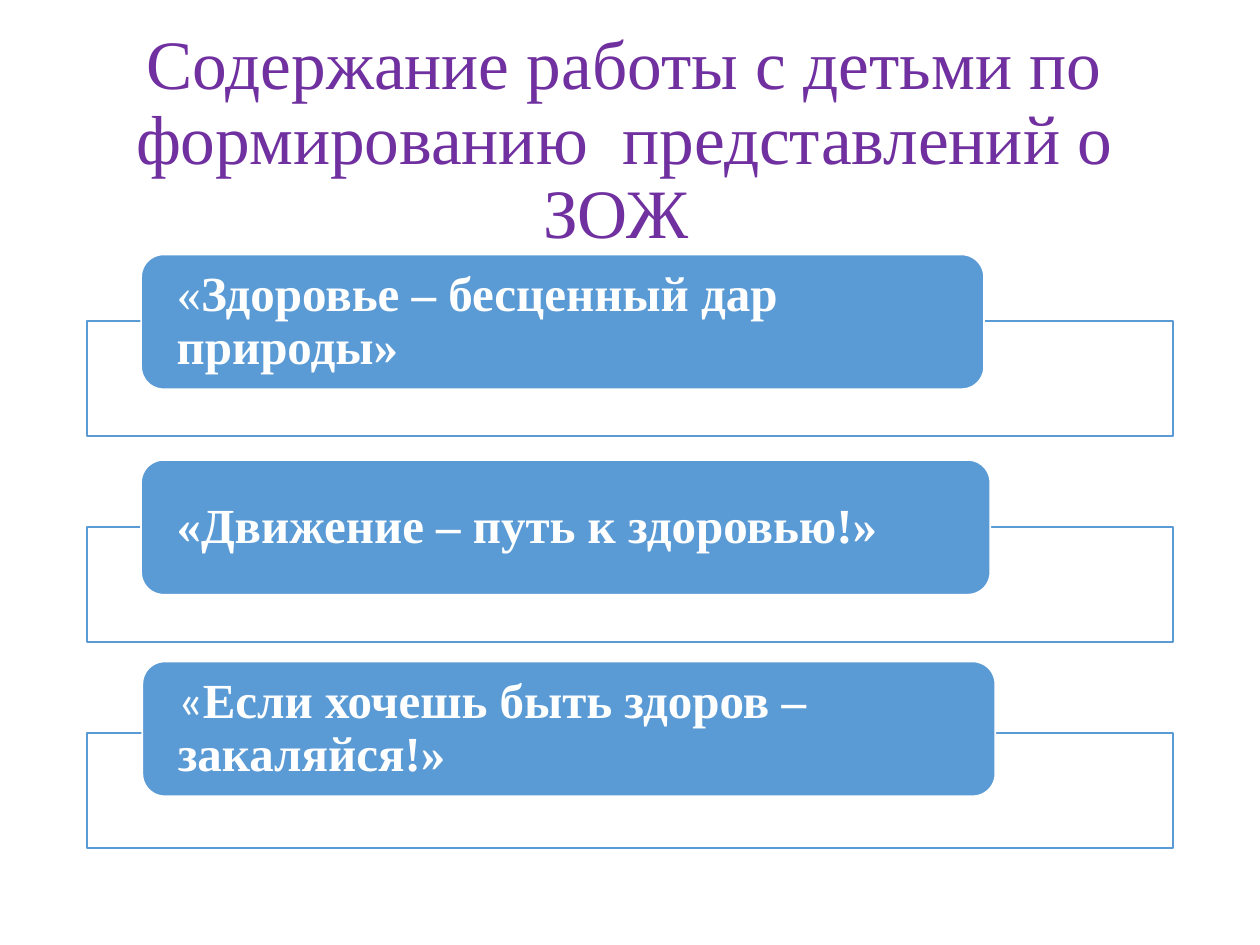
from lxml.etree import SubElement
from pptx import Presentation
from pptx.dml.color import RGBColor
from pptx.enum.shapes import MSO_SHAPE
from pptx.enum.text import MSO_ANCHOR, PP_ALIGN
from pptx.oxml.ns import qn
from pptx.util import Inches, Pt

WIDTH, HEIGHT = Inches(10), Inches(7.5)
PURPLE, BLUE, WHITE = "7030A0", "5B9BD5", "FFFFFF"
SERIF, SANS = "Times New Roman", "Calibri"
TITLE = "Содержание работы с детьми по формированию  представлений о ЗОЖ "
FIRST_FRAME_TOP, FRAME_PITCH = 34, 21.8
TOPICS = [
    (11.2, 26.93, 66.9, [("«", SERIF, False), ("Здоровье\u00a0– бесценный дар природы»", SERIF, True)]),
    (11.2, 48.67, 67.4, [("«Движение – путь к\u00a0здоровью!»", SERIF, True)]),
    (11.3, 70, 67.7, [("«", SANS, False), ("Если хочешь быть\u00a0здоров – закаляйся!»", SERIF, True)]),
]


def color(hex_value):
    return RGBColor.from_string(hex_value)


def place(left, top, width, height):
    return (round(WIDTH * left / 100), round(HEIGHT * top / 100),
            round(WIDTH * width / 100), round(HEIGHT * height / 100))


def set_up_text(frame, size, hex_value):
    frame.word_wrap = True
    frame.vertical_anchor = MSO_ANCHOR.MIDDLE
    paragraph = frame.paragraphs[0]
    paragraph.line_spacing = 0.9
    paragraph.font.size = Pt(size)
    paragraph.font.color.rgb = color(hex_value)
    return paragraph


def add_title(slide):
    title = slide.shapes.add_textbox(*place(3.8, 5.33, 91.5, 19.33))
    paragraph = set_up_text(title.text_frame, 39.6, PURPLE)
    paragraph.alignment = PP_ALIGN.CENTER
    paragraph.font.name = SERIF
    paragraph.add_run().text = TITLE


def add_panel(slide, outline, bounds, fill, line):
    panel = slide.shapes.add_shape(outline, *place(*bounds))
    panel.shadow.inherit = False
    panel.fill.solid()
    panel.fill.fore_color.rgb = color(fill)
    panel.line.color.rgb = color(line)
    panel.line.width = Pt(1)
    return panel


def add_frame(slide, top):
    frame = add_panel(slide, MSO_SHAPE.RECTANGLE, (6.9, top, 86.2, 12.13), WHITE, BLUE)
    white_fill = frame.fill._xPr.find(qn("a:solidFill"))[0]
    SubElement(white_fill, qn("a:alpha"), val="90000")


def add_topic(slide, left, top, width, pieces):
    topic = add_panel(slide, MSO_SHAPE.ROUNDED_RECTANGLE, (left, top, width, 14.27), BLUE, WHITE)
    text = topic.text_frame
    text.margin_left = text.margin_right = Inches(0.23)
    text.margin_top = text.margin_bottom = 0
    paragraph = set_up_text(text, 28, WHITE)
    paragraph.alignment = PP_ALIGN.LEFT
    for wording, typeface, bold in pieces:
        run = paragraph.add_run()
        run.text = wording
        run.font.name = typeface
        run.font.bold = bold


def main():
    presentation = Presentation()
    presentation.slide_width, presentation.slide_height = WIDTH, HEIGHT
    slide = presentation.slides.add_slide(presentation.slide_layouts[6])
    add_title(slide)
    for row, topic in enumerate(TOPICS):
        add_frame(slide, FIRST_FRAME_TOP + row * FRAME_PITCH)
        add_topic(slide, *topic)
    presentation.save("out.pptx")


if __name__ == "__main__":
    main()
